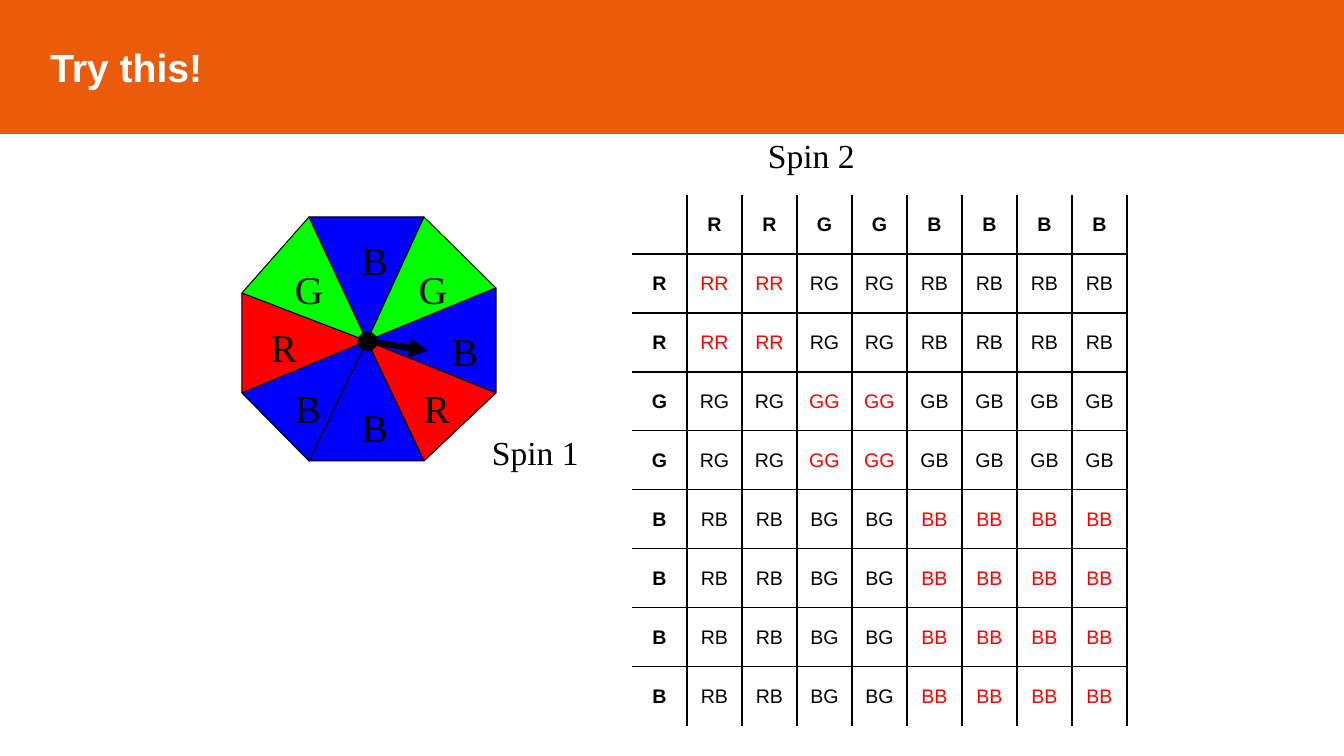
"""Build a slide with an eight-part spinner and its two-spin outcome table."""
from itertools import product

from lxml import etree
from pptx import Presentation
from pptx.dml.color import RGBColor
from pptx.enum.shapes import MSO_CONNECTOR, MSO_SHAPE
from pptx.enum.text import MSO_ANCHOR, PP_ALIGN
from pptx.oxml.ns import qn
from pptx.util import Pt

PX = 9072
STRAIGHT, ELLIPSE = MSO_CONNECTOR.STRAIGHT, MSO_SHAPE.OVAL
MIDDLE, LEFT, CENTER = MSO_ANCHOR.MIDDLE, PP_ALIGN.LEFT, PP_ALIGN.CENTER
SANS, SERIF = "Arial", "Times New Roman"
PLAIN_TABLE = "{2D5ABB26-0587-4C30-8999-92F81FD0307C}"
COLORS = {"R": "FF0000", "G": "00FF00", "B": "0000FF", "ink": "000000",
          "banner": "EA5B0C", "paper": "FFFFFF", "match": "FF0000"}

TITLE = "Try this!"
SPINS = "RRGGBBBB"
HUB = (367, 341)
HUB_SIZE = 19
POINTER_TIP = (428, 351)
CORNERS = [(309, 217), (424, 217), (496, 288), (496, 393),
           (424, 461), (309, 461), (242, 393), (242, 293)]
SLICES = [("B", 352, 231), ("G", 409, 260), ("B", 442, 322), ("R", 414, 379),
          ("B", 352, 398), ("B", 285, 379), ("R", 261, 318), ("G", 285, 260)]
LABEL_SIZE = 57
CAPTIONS = [("Spin 1", 482, 427, 137, 51), ("Spin 2", 758, 130, 206, 51)]
TABLE_LEFT, TABLE_TOP, CELL_WIDTH, CELL_HEIGHT = 632, 195, 55, 59


def px(*lengths):
    return [length * PX for length in lengths]


def color(name):
    return RGBColor.from_string(COLORS[name])


def write(frame, text, size, font, ink="ink", bold=False, align=LEFT):
    para = frame.paragraphs[0]
    para.text = text
    para.alignment = align
    para.font.size, para.font.name, para.font.bold = Pt(size), font, bold
    para.font.color.rgb = color(ink)


def paint(shape, fill, line="ink", width=0.75):
    shape.fill.solid()
    shape.fill.fore_color.rgb = color(fill)
    shape.line.color.rgb = color(line)
    shape.line.width = Pt(width)
    shape.shadow.inherit = False


def add_text(shapes, text, left, top, width, height, size):
    box = shapes.add_textbox(*px(left, top, width, height))
    box.text_frame.word_wrap = True
    write(box.text_frame, text, size, SERIF)


def add_banner(page):
    banner = page.shapes.title
    banner.left, banner.top, banner.width, banner.height = px(0, 0, 1344, 133)
    paint(banner, "banner", "banner", 2)
    frame = banner.text_frame
    frame.vertical_anchor = MIDDLE
    frame.margin_left = 50 * PX
    write(frame, TITLE, 28, SANS, "paper", True)


def add_spinner(page):
    shapes = page.shapes.add_group_shape().shapes
    next_corners = CORNERS[1:] + CORNERS[:1]
    for (letter, _, _), start, end in zip(SLICES, CORNERS, next_corners):
        outline = shapes.build_freeform(*HUB, scale=PX)
        outline.add_line_segments([start, end], close=True)
        paint(outline.convert_to_shape(), letter)
    for letter, left, top in SLICES:
        add_text(shapes, letter, left, top, LABEL_SIZE, LABEL_SIZE, 28)
    pointer = shapes.add_connector(STRAIGHT, *px(*HUB, *POINTER_TIP))
    pointer.line.color.rgb = color("ink")
    pointer.line.width = Pt(4.5)
    etree.SubElement(pointer.line._get_or_add_ln(), qn("a:tailEnd"), type="triangle")
    etree.SubElement(pointer._element.spPr, qn("a:effectLst"))
    left, top = (round(center - HUB_SIZE / 2) for center in HUB)
    hub = shapes.add_shape(ELLIPSE, *px(left, top, HUB_SIZE, HUB_SIZE))
    paint(hub, "ink")


def add_border(cell, side, visible):
    line = etree.SubElement(cell._tc.get_or_add_tcPr(), qn("a:ln" + side), w=str(Pt(1)))
    if visible:
        fill = etree.SubElement(line, qn("a:solidFill"))
        etree.SubElement(fill, qn("a:srgbClr"), val=COLORS["ink"])
    else:
        etree.SubElement(line, qn("a:noFill"))


def add_outcomes(page):
    count = len(SPINS) + 1
    frame = page.shapes.add_table(count, count, *px(
        TABLE_LEFT, TABLE_TOP, CELL_WIDTH * count, CELL_HEIGHT * count))
    table = frame.table
    table.first_row = table.horz_banding = False
    table._tbl.tblPr.find(qn("a:tableStyleId")).text = PLAIN_TABLE
    for line in table.columns:
        line.width = CELL_WIDTH * PX
    for line in table.rows:
        line.height = CELL_HEIGHT * PX
    heads = [""] + list(SPINS)
    for row, column in product(range(count), repeat=2):
        cell = table.cell(row, column)
        first, second = heads[row], heads[column]
        text = "".join(sorted(first + second, key=lambda letter: letter != "R"))
        is_match = first == second
        cell.vertical_anchor = MIDDLE
        write(cell.text_frame, text, 14, SANS, "match" if is_match else "ink",
              row == 0 or column == 0, CENTER)
        for side, visible in (("L", column > 0), ("R", True),
                              ("T", row > 0), ("B", row < count - 1)):
            add_border(cell, side, visible)
        cell.fill.background()


def main():
    deck = Presentation()
    deck.slide_width, deck.slide_height = px(1344, 756)
    page = deck.slides.add_slide(deck.slide_layouts[5])
    add_banner(page)
    add_spinner(page)
    add_outcomes(page)
    for caption in CAPTIONS:
        add_text(page.shapes, *caption, 24)
    deck.save("out.pptx")


if __name__ == "__main__":
    main()
